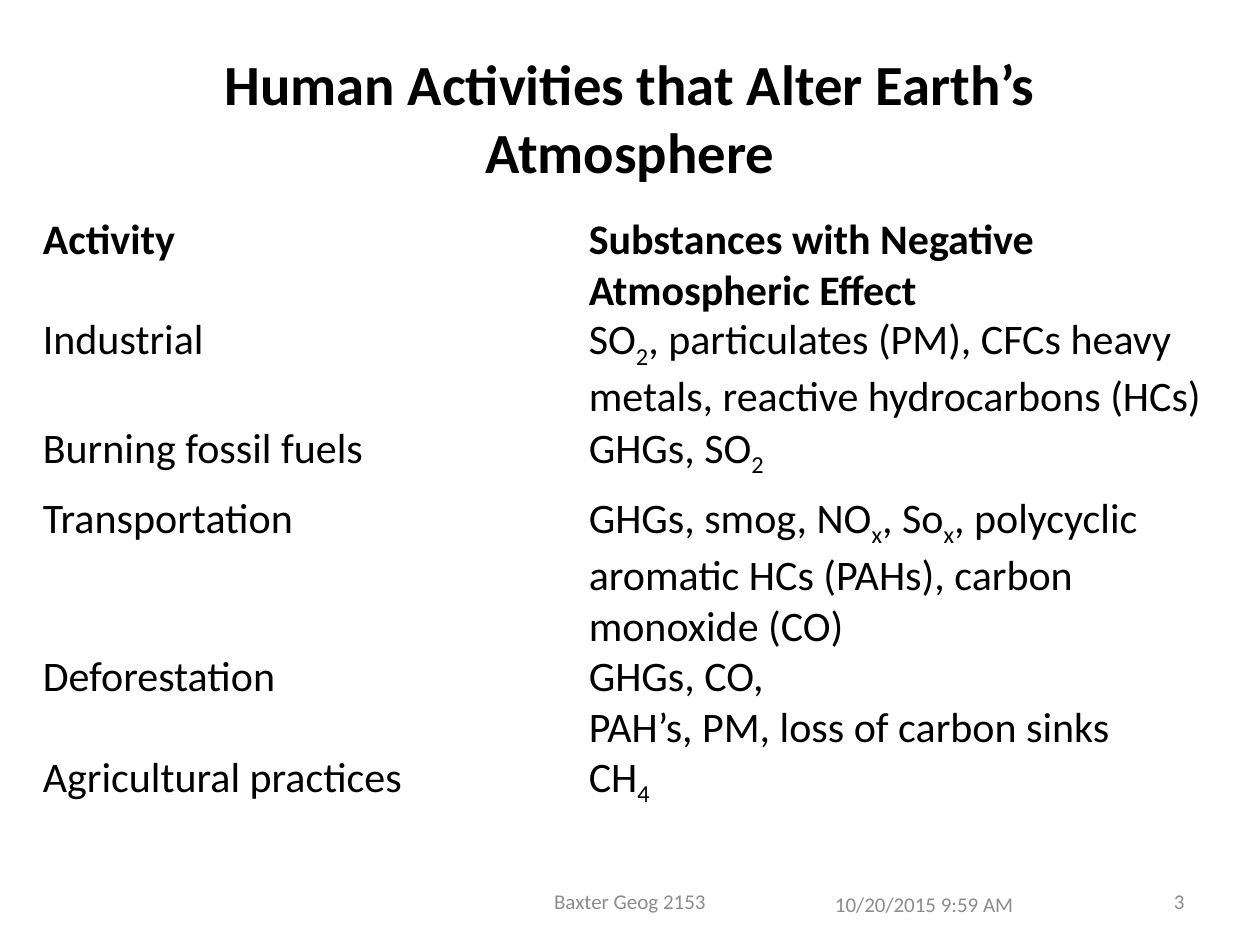
from pptx import Presentation
from pptx.dml.color import RGBColor
from pptx.enum.text import MSO_ANCHOR as ANCHOR, PP_ALIGN as ALIGN
from pptx.util import Pt

BLACK = RGBColor(0x00, 0x00, 0x00)
GRAY = RGBColor(0x8C, 0x8C, 0x8C)

COLUMNS = [312, 366]
# Each row: height, activity, substances; text between tildes is a subscript.
ROWS = [
    (40, "Activity", "Substances with Negative Atmospheric Effect"),
    (62, "Industrial",
     "SO~2~, particulates (PM), CFCs heavy metals, reactive hydrocarbons (HCs)"),
    (40, "Burning fossil fuels", "GHGs, SO~2~"),
    (57.6, "Transportation",
     "GHGs, smog, NO~x~, So~x~, polycyclic aromatic HCs (PAHs), carbon monoxide (CO)"),
    (57.6, "Deforestation", "GHGs, CO,\nPAH’s, PM, loss of carbon sinks"),
    (40, "Agricultural practices", "CH~4~"),
]
FOOTERS = [
    ("10/20/2015 9:59 AM", 470, 502.5, 168, ALIGN.LEFT),
    ("Baxter Geog 2153", 246, 500.4, 228, ALIGN.CENTER),
    ("3", 516, 500.4, 168, ALIGN.RIGHT),
]


class SlideBuilder:
    font = "Calibri"

    def __init__(self, slide):
        self.s = slide

    def style(self, p, size, color=BLACK, bold=False, align=ALIGN.LEFT):
        p.alignment = align
        f = p.font
        f.name, f.size, f.bold = self.font, Pt(size), bold
        f.color.rgb = color

    def title(self, text, x, y, w, h):
        sp = self.s.shapes.title
        sp.left, sp.top, sp.width, sp.height = Pt(x), Pt(y), Pt(w), Pt(h)
        tf = sp.text_frame
        tf.text = text
        tf.vertical_anchor = ANCHOR.MIDDLE
        tf.margin_left = tf.margin_right = Pt(18)
        self.style(tf.paragraphs[0], 32.4, bold=True, align=ALIGN.CENTER)

    def footer(self, text, x, y, w, align):
        tf = self.s.shapes.add_textbox(Pt(x), Pt(y), Pt(w), Pt(28.8)).text_frame
        tf.word_wrap = True
        tf.vertical_anchor = ANCHOR.MIDDLE
        tf.text = text
        self.style(tf.paragraphs[0], 12, GRAY, align=align)

    def cell(self, cell, text, bold):
        cell.fill.background()
        cell.margin_left = cell.margin_right = Pt(4.5)
        cell.margin_top = cell.margin_bottom = 0
        tf = cell.text_frame
        for i, line in enumerate(text.split("\n")):
            p = tf.add_paragraph() if i else tf.paragraphs[0]
            self.style(p, 24, bold=bold)
            for j, part in enumerate(line.split("~")):
                if part:
                    r = p.add_run()
                    r.text = part
                    if j % 2:
                        r.font._element.set("baseline", "-25000")

    def table(self, rows, columns, x, y):
        height = sum(row[0] for row in rows)
        table = self.s.shapes.add_table(
            len(rows), len(columns), Pt(x), Pt(y), Pt(sum(columns)), Pt(height)).table
        table.first_row = table.horz_banding = False
        for column, width in zip(table.columns, columns):
            column.width = Pt(width)
        for i, (row_height, *texts) in enumerate(rows):
            table.rows[i].height = Pt(row_height)
            for j, text in enumerate(texts):
                self.cell(table.cell(i, j), text, bold=i == 0)


def main():
    prs = Presentation()
    prs.slide_width, prs.slide_height = Pt(720), Pt(540)
    builder = SlideBuilder(prs.slides.add_slide(prs.slide_layouts[5]))
    builder.title("Human Activities that Alter Earth’s Atmosphere", 36, 21.6, 648, 90)
    for footer in FOOTERS:
        builder.footer(*footer)
    builder.table(ROWS, COLUMNS, 20, 122.4)
    prs.save("out.pptx")


if __name__ == "__main__":
    main()
